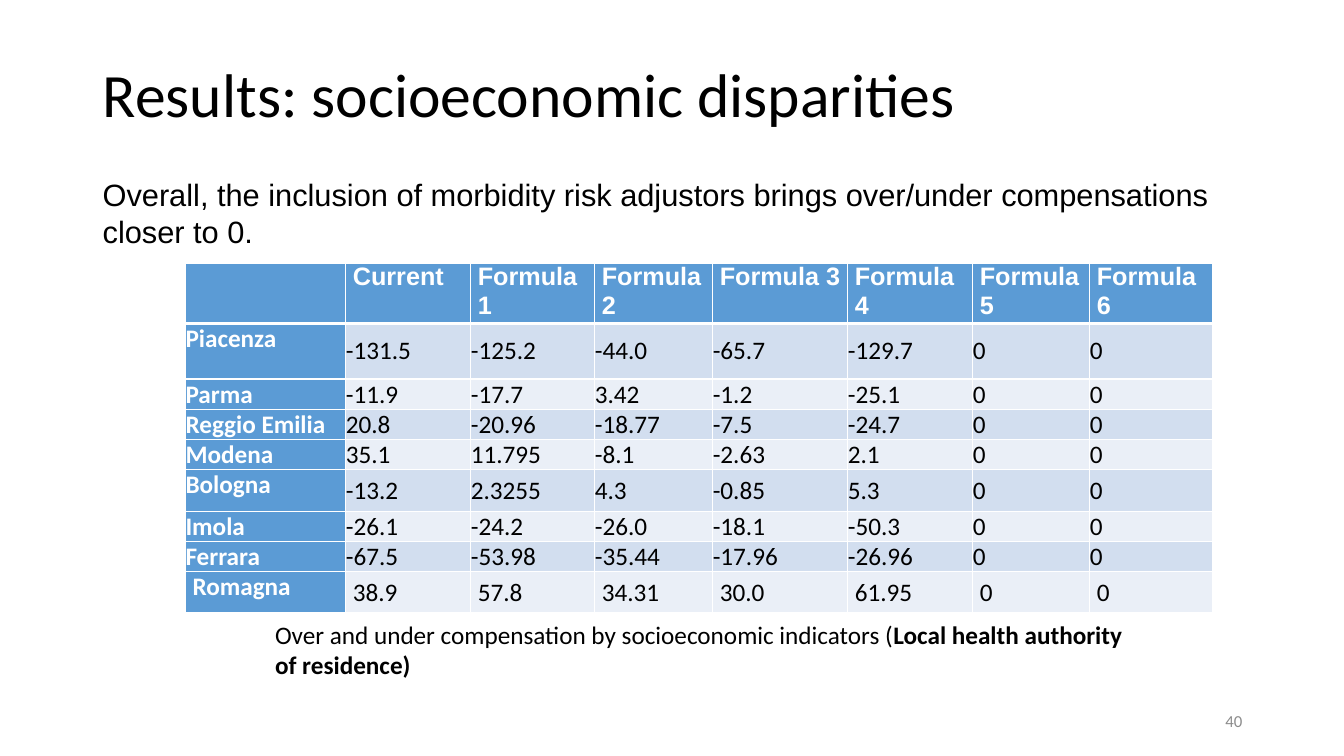
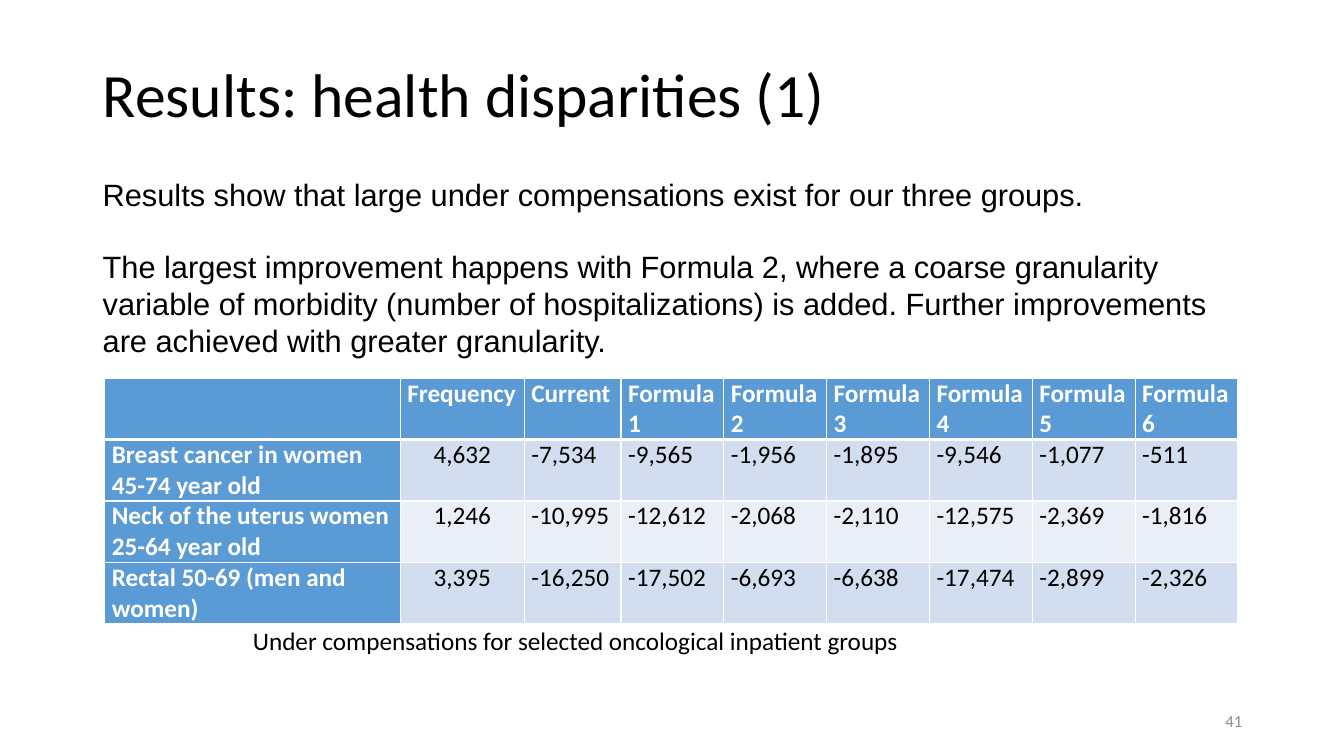
import pptx
import pptx.util
import pptx.dml.color
import pptx.enum.text
import pptx.oxml
import pptx.oxml.ns

Inches = pptx.util.Inches
Pt = pptx.util.Pt
ALIGN = pptx.enum.text.PP_ALIGN
ANCHOR = pptx.enum.text.MSO_ANCHOR

COLORS = {
    "text": "000000",
    "number": "8C8C8C",
    "white": "FFFFFF",
    "header": "5B9BD5",
    "band_dark": "D2DEEF",
    "band_light": "EAEFF7",
}
FORMULAS = [f"Formula {number}" for number in range(1, 7)]
CELL_INSET = 0.07

DISPARITY_ROWS = [
    ["", "Current"] + FORMULAS,
    ["Piacenza", "-131.5", "-125.2", "-44.0", "-65.7", "-129.7", "0", "0"],
    ["Parma", "-11.9", "-17.7", "3.42", "-1.2", "-25.1", "0", "0"],
    ["Reggio Emilia", "20.8", "-20.96", "-18.77", "-7.5", "-24.7", "0", "0"],
    ["Modena", "35.1", "11.795", "-8.1", "-2.63", "2.1", "0", "0"],
    ["Bologna", "-13.2", "2.3255", "4.3", "-0.85", "5.3", "0", "0"],
    ["Imola", "-26.1", "-24.2", "-26.0", "-18.1", "-50.3", "0", "0"],
    ["Ferrara", "-67.5", "-53.98", "-35.44", "-17.96", "-26.96", "0", "0"],
    ["Romagna", "38.9", "57.8", "34.31", "30.0", "61.95", "0", "0"],
]
ONCOLOGY_ROWS = [
    ["", "Frequency", "Current"] + FORMULAS,
    ["Breast cancer in women 45-74 year old", "4,632", "-7,534", "-9,565",
     "-1,956", "-1,895", "-9,546", "-1,077", "-511"],
    ["Neck of the uterus women 25-64 year old", "1,246", "-10,995", "-12,612",
     "-2,068", "-2,110", "-12,575", "-2,369", "-1,816"],
    ["Rectal 50-69 (men and women)", "3,395", "-16,250", "-17,502",
     "-6,693", "-6,638", "-17,474", "-2,899", "-2,326"],
]


def rgb(name):
    return pptx.dml.color.RGBColor.from_string(COLORS[name])


def write_text(paragraph, text, size=18, font="Calibri", color="text",
               bold=False, align=ALIGN.LEFT):
    """Append one formatted run to a paragraph."""
    paragraph.alignment = align
    run = paragraph.add_run()
    run.text = text
    run.font.size = Pt(size)
    run.font.name = font
    run.font.bold = bold
    run.font.color.rgb = rgb(color)


def add_text_frame(slide, box, anchor=ANCHOR.TOP):
    frame = slide.shapes.add_textbox(*map(Inches, box)).text_frame
    frame.word_wrap = True
    frame.vertical_anchor = anchor
    return frame


# Slide frame: title and page number
def add_titled_slide(presentation, title, number, title_width=11.5):
    slide = presentation.slides.add_slide(presentation.slide_layouts[5])
    shape = slide.shapes.title
    shape.left, shape.top, shape.width, shape.height = map(
        Inches, (0.92, 0.24, title_width, 1.45))
    frame = shape.text_frame
    frame.word_wrap = True
    frame.auto_size = pptx.enum.text.MSO_AUTO_SIZE.NONE
    frame.vertical_anchor = ANCHOR.MIDDLE
    frame.paragraphs[0].line_spacing = 0.9
    write_text(frame.paragraphs[0], title, size=44)

    frame = add_text_frame(slide, (9.42, 6.95, 3, 0.4), ANCHOR.MIDDLE)
    write_text(frame.paragraphs[0], str(number), size=12, color="number",
               align=ALIGN.RIGHT)
    return slide


# Text above and below the table
def add_body(slide, box, texts):
    frame = add_text_frame(slide, box)
    for index, text in enumerate(texts):
        paragraph = frame.add_paragraph() if index else frame.paragraphs[0]
        if index:
            paragraph.space_before = Pt(25.3)
        write_text(paragraph, text, size=22, font="Arial")


def add_caption(slide, box, text, bold_text=""):
    paragraph = add_text_frame(slide, box).paragraphs[0]
    write_text(paragraph, text)
    if bold_text:
        write_text(paragraph, bold_text, bold=True)


# Table
def set_borders(cell, top=1, bottom=1):
    """White borders; the line elements come before the fill."""
    properties = cell._tc.get_or_add_tcPr()
    widths = {"lnL": 1, "lnR": 1, "lnT": top, "lnB": bottom}
    for index, (tag, width) in enumerate(widths.items()):
        properties.insert(index, pptx.oxml.parse_xml(
            f'<a:{tag} {pptx.oxml.ns.nsdecls("a")} w="{Pt(width)}"><a:solidFill>'
            f'<a:srgbClr val="{COLORS["white"]}"/></a:solidFill></a:{tag}>'))


def add_data_table(slide, left, top, widths, heights, rows, header_font="Calibri",
                   name_anchor=ANCHOR.TOP, value_anchor=ANCHOR.TOP,
                   flush_rows=(), centered_column=None):
    """Blue header row and name column around banded values."""
    table = slide.shapes.add_table(
        len(rows), len(widths), Inches(left), Inches(top),
        Inches(sum(widths)), Inches(sum(heights))).table
    for column, width in zip(table.columns, widths):
        column.width = Inches(width)
    for row, height in zip(table.rows, heights):
        row.height = Inches(height)

    for row_index, values in enumerate(rows):
        is_header = row_index == 0
        band = "band_dark" if row_index % 2 else "band_light"
        inset = 0 if row_index in flush_rows else CELL_INSET
        for column_index, value in enumerate(values):
            cell = table.cell(row_index, column_index)
            is_name = column_index == 0
            is_label = is_header or is_name
            cell.margin_left = cell.margin_right = Inches(inset)
            cell.margin_top = cell.margin_bottom = 0
            cell.fill.solid()
            cell.fill.fore_color.rgb = rgb("header" if is_label else band)
            set_borders(cell, top=3 if row_index == 1 else 1,
                        bottom=3 if is_header else 1)
            if is_header:
                cell.vertical_anchor = ANCHOR.TOP
            else:
                cell.vertical_anchor = name_anchor if is_name else value_anchor
            if value:
                is_centered = column_index == centered_column and not is_header
                write_text(cell.text_frame.paragraphs[0], value,
                           font=header_font if is_header else "Calibri",
                           color="white" if is_label else "text", bold=is_label,
                           align=ALIGN.CENTER if is_centered else ALIGN.LEFT)


# Slides
def build_socioeconomic_slide(presentation):
    slide = add_titled_slide(presentation, "Results: socioeconomic disparities",
                             40, title_width=12.03)
    add_data_table(
        slide, 1.84, 2.61,
        widths=[1.59, 1.24, 1.23, 1.17, 1.34, 1.24, 1.16, 1.22],
        heights=[0.41, 0.55, 0.28, 0.28, 0.28, 0.41, 0.28, 0.28, 0.41],
        rows=DISPARITY_ROWS, header_font="Arial", value_anchor=ANCHOR.MIDDLE,
        flush_rows=range(1, 8))
    add_caption(slide, (2.63, 6.09, 8.63, 0.71),
                "Over and under compensation by socioeconomic indicators (",
                "Local health authority of residence)")
    add_body(slide, (0.92, 1.69, 11.5, 4.76), [
        "Overall, the inclusion of morbidity risk adjustors brings over/under "
        "compensations closer to 0."])


def build_health_slide(presentation):
    slide = add_titled_slide(presentation, "Results: health disparities (1)", 41)
    add_data_table(
        slide, 1.04, 3.75, widths=[2.93, 1.23, 0.96] + [1.02] * 6,
        heights=[0.61] * 4, rows=ONCOLOGY_ROWS, name_anchor=ANCHOR.BOTTOM,
        centered_column=1)
    add_caption(slide, (2.41, 6.15, 8.25, 0.4),
                "Under compensations for selected oncological inpatient groups")
    add_body(slide, (0.92, 1.69, 11.25, 1.95), [
        "Results show that large under compensations exist for our three groups.",
        "The largest improvement happens with Formula 2, where a coarse "
        "granularity variable of morbidity (number of hospitalizations) is added. "
        "Further improvements are achieved with greater granularity."])


def main():
    presentation = pptx.Presentation()
    presentation.slide_width = Inches(13.33)
    presentation.slide_height = Inches(7.5)
    build_socioeconomic_slide(presentation)
    build_health_slide(presentation)
    presentation.save("out.pptx")


if __name__ == "__main__":
    main()
